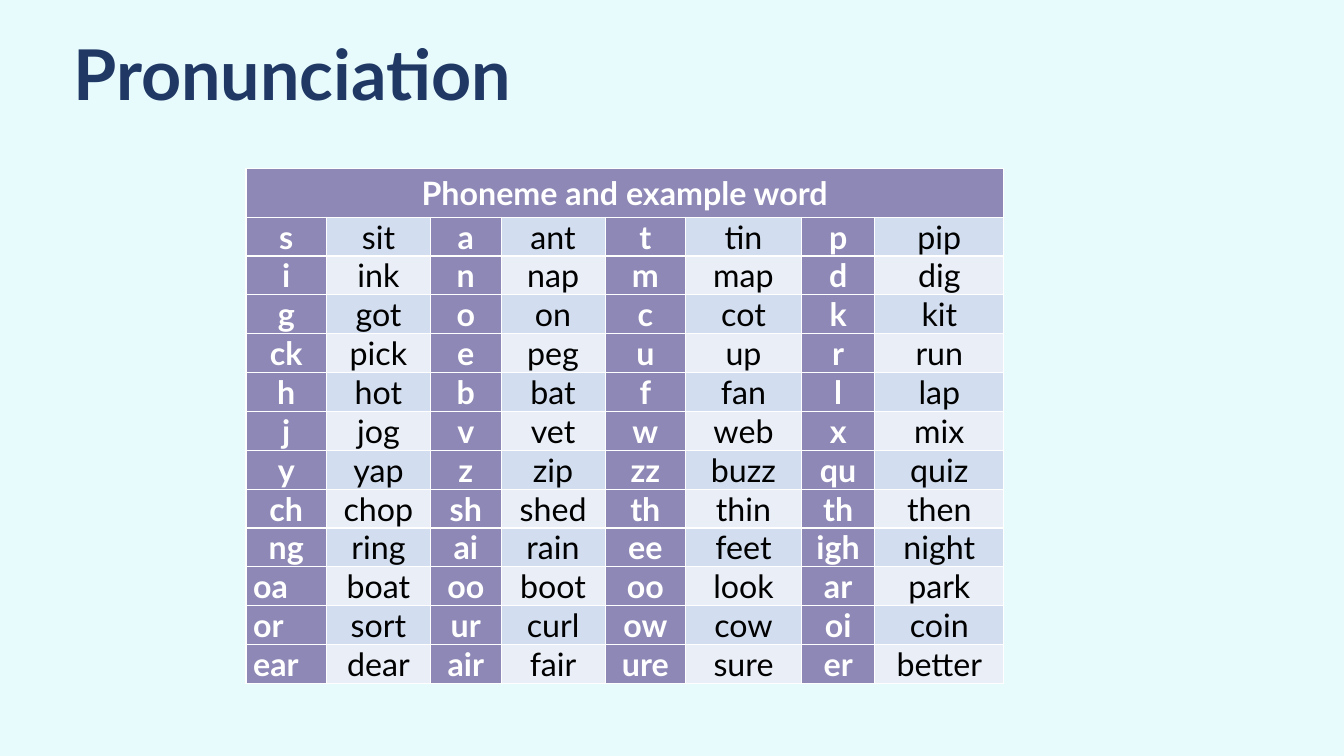
from lxml.etree import SubElement
from pptx import Presentation
from pptx.dml.color import RGBColor
from pptx.enum.text import MSO_ANCHOR, PP_ALIGN
from pptx.oxml.ns import qn
from pptx.util import Cm, Pt

# Content: phoneme and example word, in pairs
TITLE = "Pronunciation"
HEADING = "Phoneme and example word"
ROWS = [
    ("s", "sit", "a", "ant", "t", "tin", "p", "pip"),
    ("i", "ink", "n", "nap", "m", "map", "d", "dig"),
    ("g", "got", "o", "on", "c", "cot", "k", "kit"),
    ("ck", "pick", "e", "peg", "u", "up", "r", "run"),
    ("h", "hot", "b", "bat", "f", "fan", "l", "lap"),
    ("j", "jog", "v", "vet", "w", "web", "x", "mix"),
    ("y", "yap", "z", "zip", "zz", "buzz", "qu", "quiz"),
    ("ch", "chop", "sh", "shed", "th", "thin", "th", "then"),
    ("ng", "ring", "ai", "rain", "ee", "feet", "igh", "night"),
    ("oa", "boat", "oo", "boot", "oo", "look", "ar", "park"),
    ("or", "sort", "ur", "curl", "ow", "cow", "oi", "coin"),
    ("ear", "dear", "air", "fair", "ure", "sure", "er", "better"),
]
LEFT_ALIGNED = {"oa", "or", "ear"}

# Layout in centimetres
COLUMN_WIDTHS = [2.03, 2.62, 1.78, 2.62, 2.03, 2.92, 1.85, 3.25]
HEADING_HEIGHT, ROW_HEIGHT = 1.2, 0.97

# Style
FONT = "Lato"
NAVY, PURPLE, WHITE, BLACK = "203864", "351771", "FFFFFF", "000000"
BACKGROUND = "E7FBFD"
BANDS = ["D2DEEF", "EAEFF7"]


def paint(fill, color, opacity=100):
    fill.solid()
    fill.fore_color.rgb = RGBColor.from_string(color)
    if opacity < 100:
        color_element = fill._xPr.find(qn("a:solidFill"))[0]
        SubElement(color_element, qn("a:alpha"), val=str(opacity * 1000))


def write(frame, text, size=23, color=BLACK, bold=False,
          align=PP_ALIGN.CENTER, line_spacing=None):
    paragraph = frame.paragraphs[0]
    paragraph.alignment = align
    paragraph.line_spacing = line_spacing
    run = paragraph.add_run()
    run.text = text
    run.font.name = FONT
    run.font.size = Pt(size)
    run.font.bold = bold
    run.font.color.rgb = RGBColor.from_string(color)


presentation = Presentation()
presentation.slide_width, presentation.slide_height = Cm(33.87), Cm(19.05)
slide = presentation.slides.add_slide(presentation.slide_layouts[6])
paint(slide.background.fill, BACKGROUND)

# Table; its default style gives the white borders
table = slide.shapes.add_table(
    len(ROWS) + 1, len(COLUMN_WIDTHS), Cm(6.2), Cm(4.24),
    Cm(sum(COLUMN_WIDTHS)), Cm(HEADING_HEIGHT + ROW_HEIGHT * len(ROWS))).table
for column, width in zip(table.columns, COLUMN_WIDTHS):
    column.width = Cm(width)
for row in table.rows:
    row.height = Cm(ROW_HEIGHT)
table.rows[0].height = Cm(HEADING_HEIGHT)

# Heading row
heading = table.cell(0, 0)
heading.merge(table.cell(0, len(COLUMN_WIDTHS) - 1))
paint(heading.fill, PURPLE, opacity=50)
write(heading.text_frame, HEADING, color=WHITE, bold=True)

# Phonemes in even columns, words in odd columns
for row_index, row_texts in enumerate(ROWS):
    for column_index, text in enumerate(row_texts):
        cell = table.cell(row_index + 1, column_index)
        cell.margin_left = cell.margin_right = Cm(0.18)
        cell.margin_top = cell.margin_bottom = 0
        if column_index % 2 == 0:
            align = PP_ALIGN.LEFT if text in LEFT_ALIGNED else PP_ALIGN.CENTER
            paint(cell.fill, PURPLE, opacity=50)
            write(cell.text_frame, text, color=WHITE, bold=True, align=align)
        else:
            paint(cell.fill, BANDS[row_index % 2])
            write(cell.text_frame, text)

# Title
title = slide.shapes.add_textbox(Cm(1.6), Cm(0.89), Cm(29.21), Cm(3.68))
title.text_frame.word_wrap = True
title.text_frame.vertical_anchor = MSO_ANCHOR.TOP
write(title.text_frame, TITLE, size=50, color=NAVY, bold=True,
      align=PP_ALIGN.LEFT, line_spacing=0.9)

presentation.save("out.pptx")
